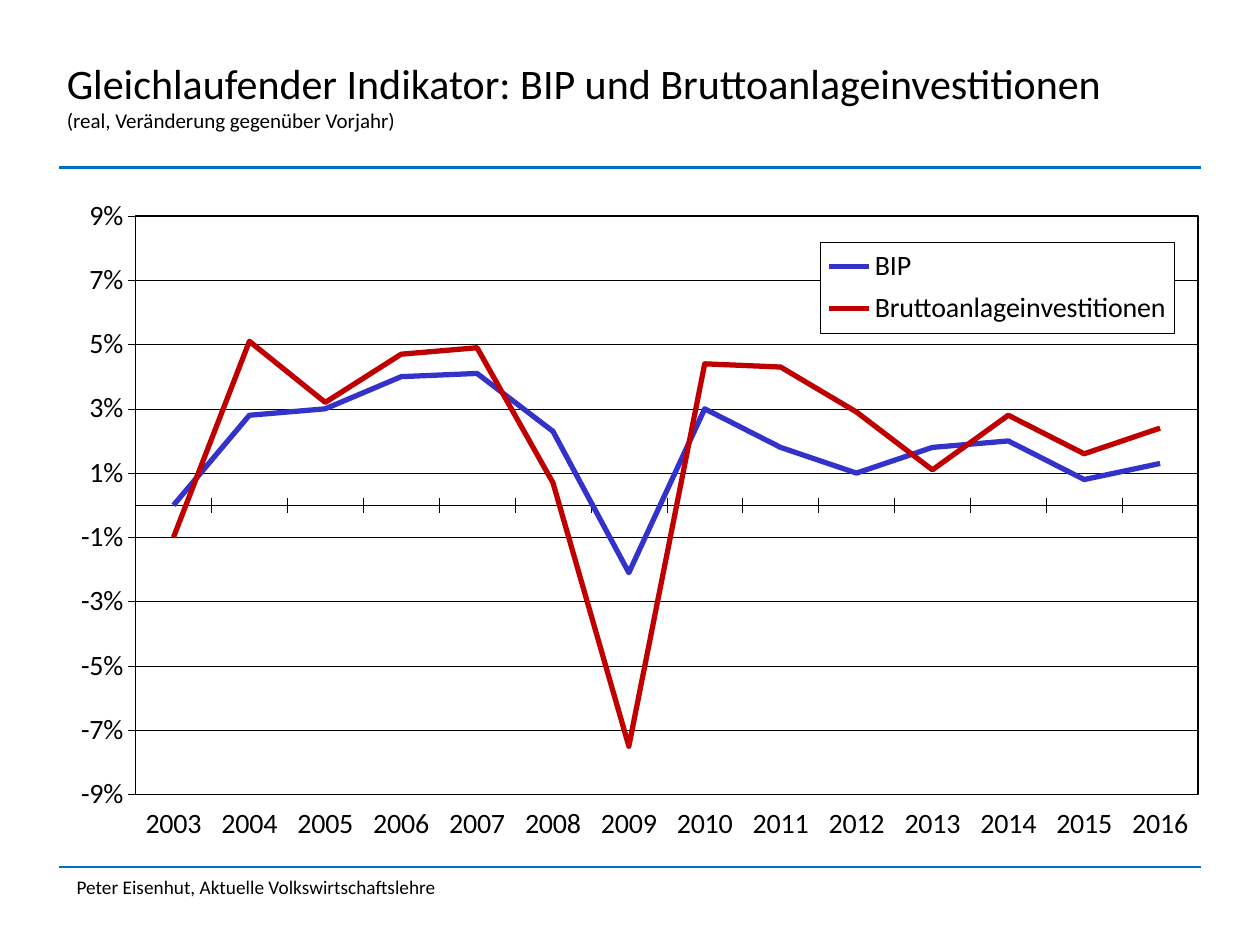
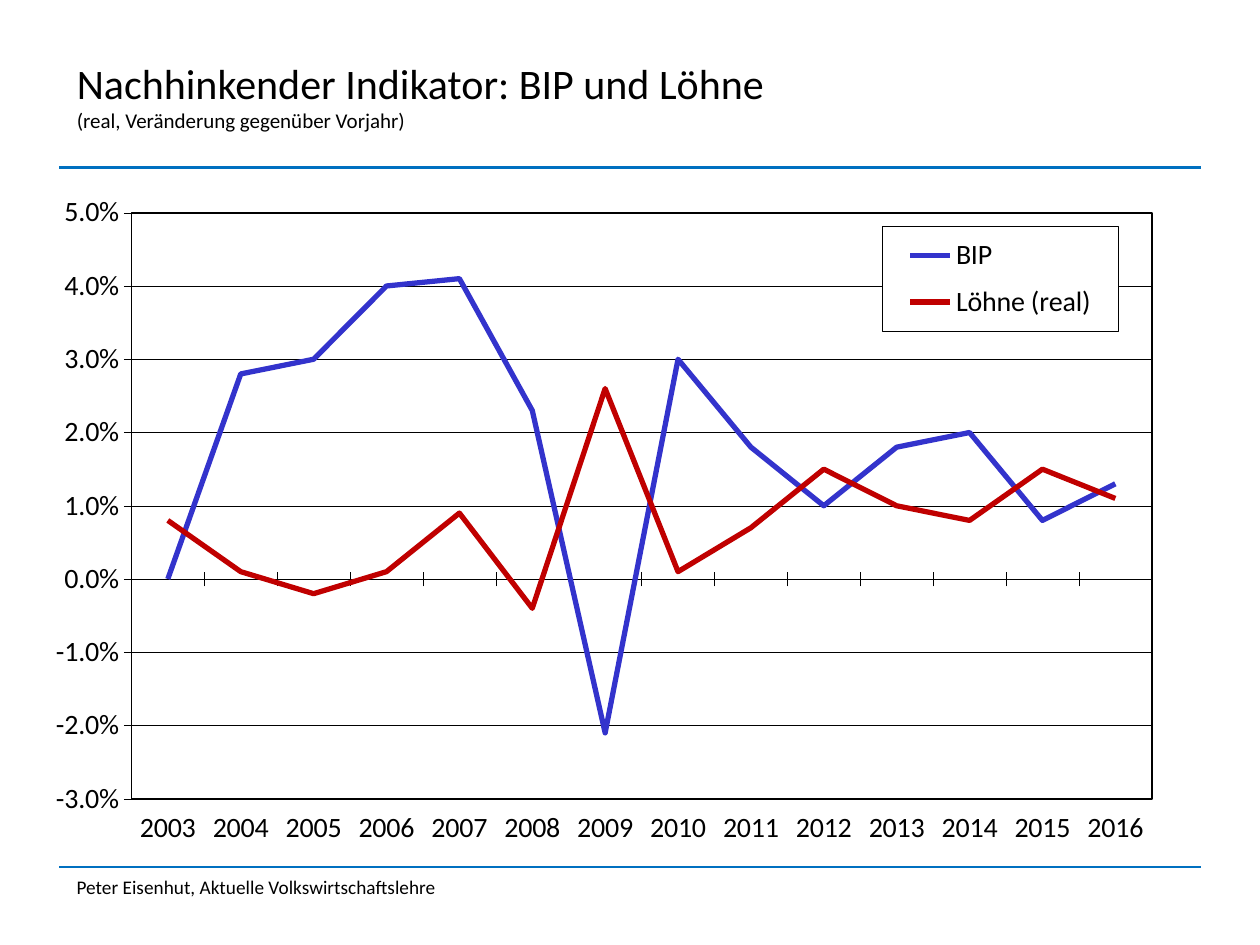
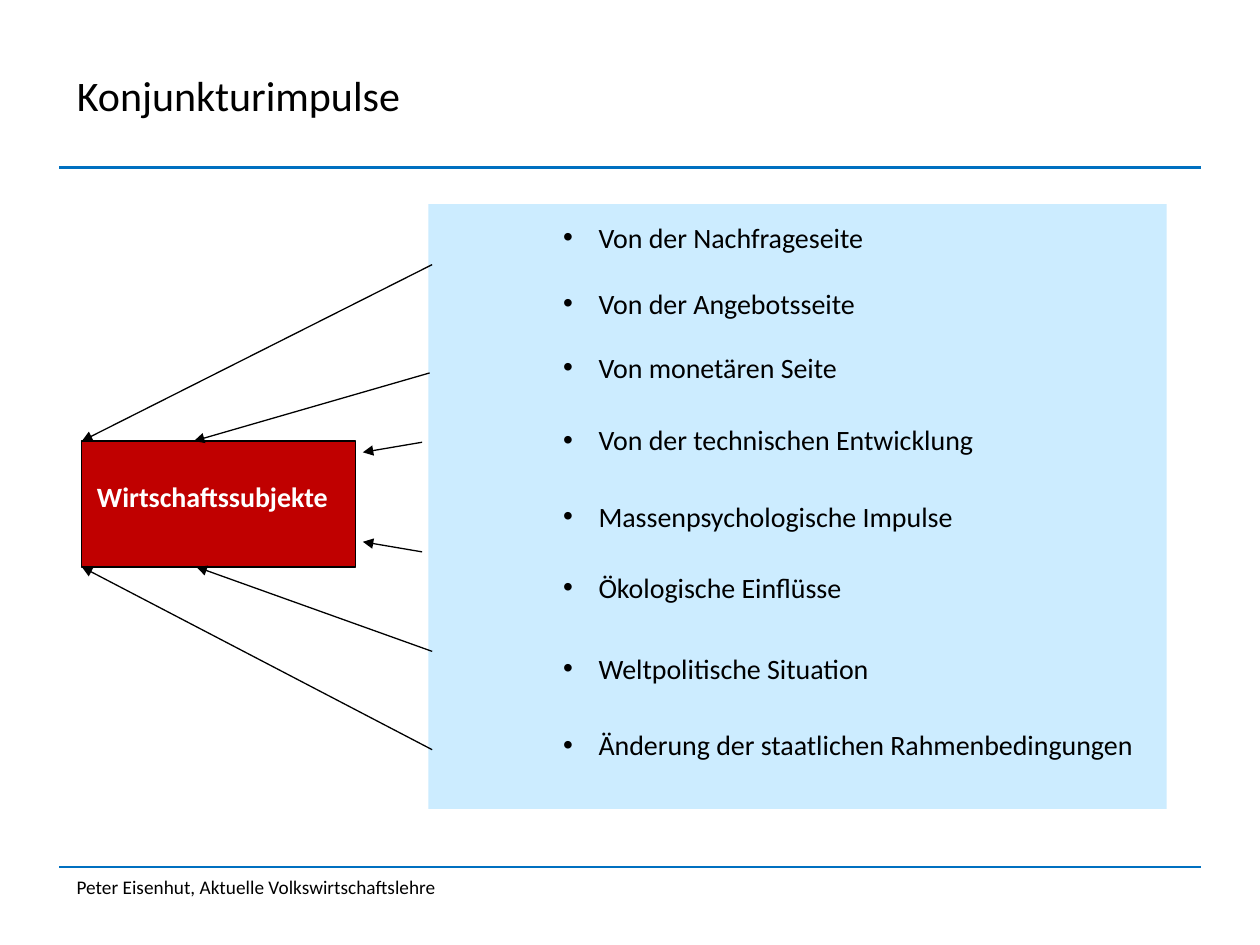
from dataclasses import dataclass

from lxml.etree import SubElement
from pptx import Presentation
from pptx.chart.data import CategoryChartData
from pptx.dml.color import RGBColor
from pptx.enum.chart import XL_CHART_TYPE, XL_LEGEND_POSITION, XL_TICK_LABEL_POSITION, XL_TICK_MARK
from pptx.enum.shapes import MSO_CONNECTOR, MSO_SHAPE
from pptx.enum.text import MSO_ANCHOR, MSO_AUTO_SIZE, PP_ALIGN
from pptx.oxml import parse_xml
from pptx.oxml.ns import nsdecls, qn
from pptx.util import Inches, Pt


@dataclass(frozen=True)
class Theme:
    font: str = "Calibri"
    black: str = "000000"
    white: str = "FFFFFF"
    rule: str = "0070C0"
    panel: str = "CCECFF"
    blue: str = "3333CC"
    red: str = "C00000"
    title_size: float = 24
    subtitle_size: float = 12
    body_size: float = 16
    footer_size: float = 11
    hairline: float = 0.25
    thin: float = 0.75
    rule_width: float = 1.25
    series_width: float = 3
    line_height: float = 1.22


THEME = Theme()
FOOTER = "Peter Eisenhut, Aktuelle Volkswirtschaftslehre"
SUBTITLE = "(real, Veränderung gegenüber Vorjahr)"
YEARS = [str(year) for year in range(2003, 2017)]
GDP = [0, 0.028, 0.03, 0.04, 0.041, 0.023, -0.021, 0.03, 0.018, 0.01, 0.018, 0.02, 0.008, 0.013]
INVESTMENT = [-0.01, 0.051, 0.032, 0.047, 0.049, 0.007, -0.075,
              0.044, 0.043, 0.029, 0.011, 0.028, 0.016, 0.024]
WAGES = [0.008, 0.001, -0.002, 0.001, 0.009, -0.004, 0.026,
         0.001, 0.007, 0.015, 0.01, 0.008, 0.015, 0.011]
IMPULSES = [
    ("Von der Nachfrageseite", 0),
    ("Von der Angebotsseite", 0.53),
    ("Von monetären Seite", 0.51),
    ("Von der technischen Entwicklung", 0.58),
    ("Massenpsychologische Impulse", 0.61),
    ("Ökologische Einflüsse", 0.57),
    ("Weltpolitische Situation", 0.65),
    ("Änderung der staatlichen Rahmenbedingungen", 0.61),
]
ARROWS = [
    (3.43, 2.1, 0.65, 3.5),
    (3.41, 2.96, 1.54, 3.5),
    (3.35, 3.51, 2.88, 3.59),
    (3.43, 5.95, 0.65, 4.5),
    (3.43, 5.17, 1.56, 4.5),
    (3.35, 4.38, 2.88, 4.3),
]


def rgb(color):
    return RGBColor.from_string(color)


def format_font(font, size=THEME.body_size, color=THEME.black, bold=False):
    font.name, font.size, font.bold = THEME.font, Pt(size), bold
    font.color.rgb = rgb(color)


def add_text(p, text, align=PP_ALIGN.LEFT, **font_format):
    p.alignment = align
    r = p.add_run()
    r.text = text
    format_font(r.font, **font_format)


def format_line(line, color, width):
    line.color.rgb = rgb(color)
    line.width = Pt(width)


def place(shape, left, top, width, height):
    shape.left, shape.top = Inches(left), Inches(top)
    shape.width, shape.height = Inches(width), Inches(height)


def set_layout(parent, index, box, inner=False):
    for old in parent.findall(qn("c:layout")):
        parent.remove(old)
    target = '<c:layoutTarget val="inner"/>' if inner else ""
    modes = "".join(f'<c:{key}Mode val="edge"/>' for key in "xy")
    sizes = "".join(f'<c:{key} val="{value}"/>' for key, value in zip("xywh", box))
    parent.insert(index, parse_xml(
        f'<c:layout {nsdecls("c")}><c:manualLayout>{target}{modes}{sizes}'
        '</c:manualLayout></c:layout>'))


def frame(width):
    return parse_xml(
        f'<c:spPr {nsdecls("c", "a")}>'
        f'<a:solidFill><a:srgbClr val="{THEME.white}"/></a:solidFill>'
        f'<a:ln w="{Pt(width)}"><a:solidFill><a:srgbClr val="{THEME.black}"/></a:solidFill></a:ln>'
        '</c:spPr>')


class Deck:
    def __init__(self, theme):
        self.theme = theme
        self.prs = Presentation()
        self.prs.slide_width, self.prs.slide_height = Inches(10), Inches(7.5)
        self.s = None

    def new_slide(self, title, subtitle=None, layout="Title Only", left=0.51):
        t = self.theme
        self.s = self.prs.slides.add_slide(self.prs.slide_layouts.get_by_name(layout))
        for y in (1.33, 6.88):
            self.line(0.47, y, 9.53, y, t.rule, t.rule_width)
        sp = self.s.shapes.add_textbox(Inches(0.51), Inches(6.9), Inches(8.98), Inches(0.43))
        sp.text_frame.word_wrap = True
        add_text(sp.text_frame.paragraphs[0], FOOTER, size=t.footer_size)
        self.title(title, subtitle, left)

    def title(self, title, subtitle, left):
        sp = self.s.shapes.title
        place(sp, left, 0.36, 9.09 - left, 0.79)
        tf = sp.text_frame
        tf.auto_size, tf.vertical_anchor = MSO_AUTO_SIZE.NONE, MSO_ANCHOR.MIDDLE
        add_text(tf.paragraphs[0], title, size=self.theme.title_size)
        if subtitle:
            add_text(tf.add_paragraph(), subtitle, size=self.theme.subtitle_size)

    def line(self, x1, y1, x2, y2, color, width, arrow=False):
        sp = self.s.shapes.add_connector(
            MSO_CONNECTOR.STRAIGHT, Inches(x1), Inches(y1), Inches(x2), Inches(y2))
        format_line(sp.line, color, width)
        properties = sp.element.spPr
        if arrow:
            SubElement(properties.find(qn("a:ln")), qn("a:tailEnd"), type="triangle")
        SubElement(properties, qn("a:effectLst"))

    def box(self, text, left, top, width, height):
        t = self.theme
        sp = self.s.shapes.add_shape(
            MSO_SHAPE.RECTANGLE, Inches(left), Inches(top), Inches(width), Inches(height))
        sp.shadow.inherit = False
        sp.fill.solid()
        sp.fill.fore_color.rgb = rgb(t.red)
        format_line(sp.line, t.black, t.thin)
        tf = sp.text_frame
        tf.word_wrap, tf.vertical_anchor = True, MSO_ANCHOR.TOP
        tf.margin_left, tf.margin_top = Inches(0.12), Inches(0.31)
        add_text(tf.paragraphs[0], text, color=t.white, bold=True)

    def bullets(self, items, left, top, width, height):
        t = self.theme
        sp = self.s.placeholders[1]
        place(sp, left, top, width, height)
        sp.fill.solid()
        sp.fill.fore_color.rgb = rgb(t.panel)
        tf = sp.text_frame
        tf.auto_size, tf.vertical_anchor = MSO_AUTO_SIZE.NONE, MSO_ANCHOR.TOP
        tf.margin_left, tf.margin_top = Inches(1.07), Inches(0.13)
        for i, (text, step) in enumerate(items):
            p = tf.add_paragraph() if i else tf.paragraphs[0]
            ppr = p._p.get_or_add_pPr()
            ppr.set("marL", str(Inches(0.28)))
            ppr.set("indent", str(-Inches(0.28)))
            p.space_before = Pt(max(0, round(step * 72 - t.body_size * t.line_height, 1)))
            add_text(p, text)

    def line_chart(self, series, box, plot_box, legend_box, scale, number_format):
        t = self.theme
        data = CategoryChartData(number_format=number_format)
        data.categories = YEARS
        for name, values in series:
            data.add_series(name, values)
        chart = self.s.shapes.add_chart(
            XL_CHART_TYPE.LINE, *map(Inches, box), data).chart
        chart.has_title = False
        format_font(chart.font)
        for ser, color in zip(chart.plots[0].series, (t.blue, t.red)):
            ser.smooth = False
            format_line(ser.format.line, color, t.series_width)
        chart.plots[0].vary_by_categories = False
        for axis in (chart.category_axis, chart.value_axis):
            axis.major_tick_mark = XL_TICK_MARK.CROSS
            axis.minor_tick_mark = XL_TICK_MARK.NONE
            format_line(axis.format.line, t.black, t.hairline)
            format_font(axis.tick_labels.font)
        chart.category_axis.tick_label_position = XL_TICK_LABEL_POSITION.LOW
        axis = chart.value_axis
        axis.minimum_scale, axis.maximum_scale, axis.major_unit = scale
        axis.tick_labels.number_format = number_format
        axis.tick_labels.number_format_is_linked = False
        axis.has_major_gridlines = True
        format_line(axis.major_gridlines.format.line, t.black, t.hairline)
        plot_area = chart.element.find(".//" + qn("c:plotArea"))
        set_layout(plot_area, 0, plot_box, inner=True)
        plot_area.append(frame(1))
        self.legend(chart, legend_box)

    def legend(self, chart, box):
        chart.has_legend = True
        legend = chart.legend
        legend.position = XL_LEGEND_POSITION.RIGHT
        legend.include_in_layout = False
        format_font(legend.font)
        element = chart.element.find(".//" + qn("c:legend"))
        set_layout(element, 1, box)
        element.find(qn("c:txPr")).addprevious(frame(self.theme.hairline))


def main():
    deck = Deck(THEME)

    deck.new_slide("Gleichlaufender Indikator: BIP und Bruttoanlageinvestitionen", SUBTITLE, left=0.43)
    deck.line_chart(
        [("BIP", GDP), ("Bruttoanlageinvestitionen", INVESTMENT)],
        box=(0.42, 1.56, 9.37, 5.16), plot_box=(0.07, 0.03, 0.9, 0.89),
        legend_box=(0.65, 0.07, 0.3, 0.14), scale=(-0.09, 0.09, 0.02), number_format="0%")

    deck.new_slide("Nachhinkender Indikator: BIP und Löhne", SUBTITLE)
    deck.line_chart(
        [("BIP", GDP), ("Löhne (real)", WAGES)],
        box=(0.42, 1.48, 8.9, 5.23), plot_box=(0.07, 0.04, 0.91, 0.89),
        legend_box=(0.74, 0.06, 0.21, 0.16), scale=(-0.03, 0.05, 0.01), number_format="0.0%")

    deck.new_slide("Konjunkturimpulse", layout="Title and Content")
    deck.bullets(IMPULSES, 3.4, 1.62, 5.86, 4.8)
    deck.box("Wirtschaftssubjekte", 0.65, 3.5, 2.17, 1)
    for ends in ARROWS:
        deck.line(*ends, THEME.black, THEME.thin, arrow=True)

    deck.prs.save("out.pptx")


if __name__ == "__main__":
    main()
